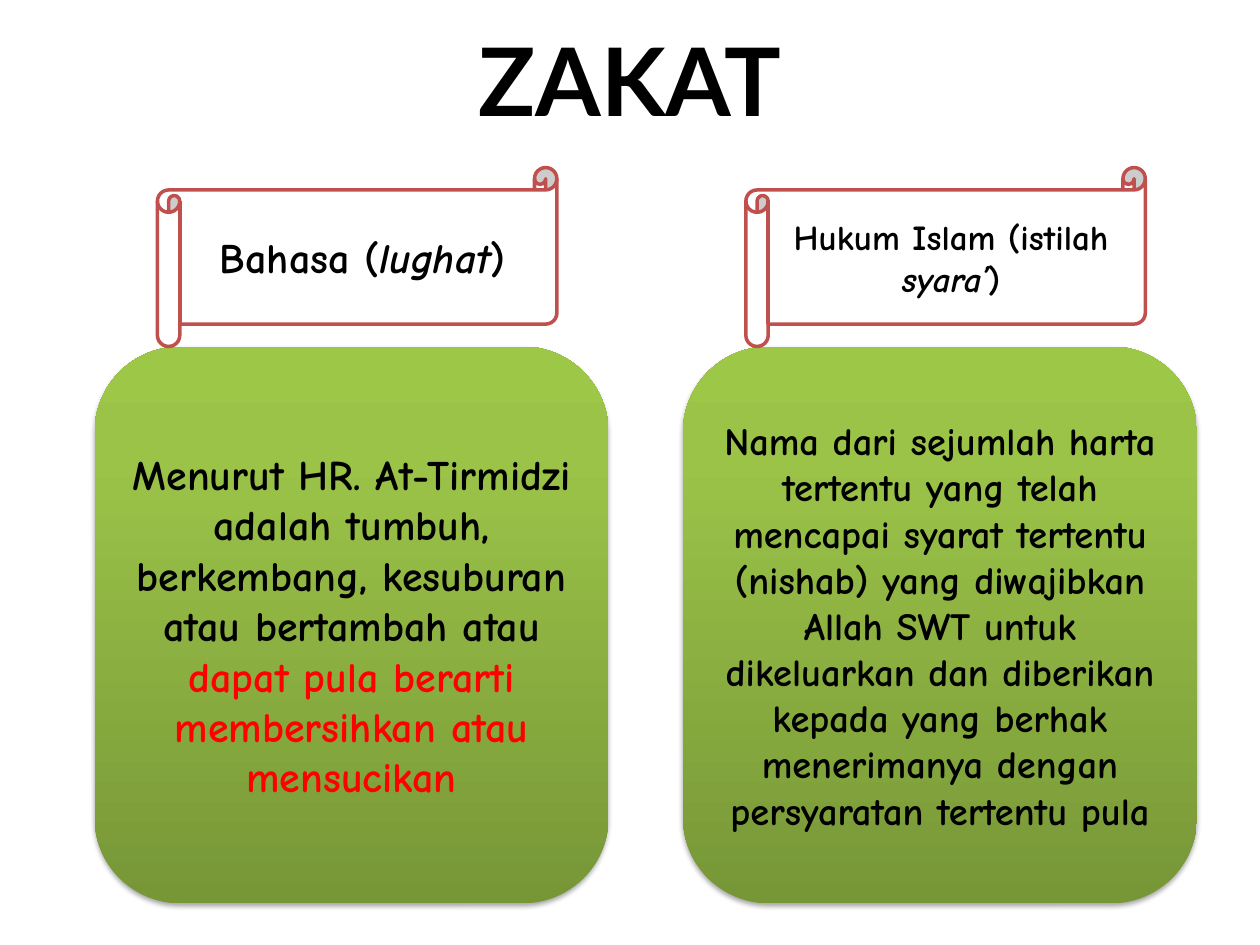
from pptx import Presentation
from pptx.dml.color import RGBColor
from pptx.enum.shapes import MSO_SHAPE
from pptx.enum.text import MSO_ANCHOR, PP_ALIGN
from pptx.oxml import parse_xml
from pptx.oxml.ns import nsdecls
from pptx.util import Inches, Pt

BLACK = RGBColor(0x00, 0x00, 0x00)
RED = RGBColor(0xFF, 0x00, 0x00)
WHITE = RGBColor(0xFF, 0xFF, 0xFF)
BRICK = RGBColor(0xC0, 0x50, 0x4D)
GREENS = [
    (0, RGBColor(0x77, 0x97, 0x37)),
    (80, RGBColor(0x9B, 0xC3, 0x48)),
    (100, RGBColor(0x9D, 0xC7, 0x46)),
]

TITLE = "ZAKAT"
MEANINGS = [
    {
        "heading": [("Bahasa (", {}), ("lughat", {"italic": True}), (")", {})],
        "heading_size": 24,
        "body": [
            ("Menurut HR. At-Tirmidzi adalah tumbuh, berkembang, kesuburan "
             "atau bertambah atau ", {}),
            ("dapat pula berarti membersihkan atau mensucikan", {"color": RED}),
        ],
        "body_size": 24,
    },
    {
        "heading": [("Hukum Islam (istilah ", {}), ("syara’", {"italic": True}), (")", {})],
        "heading_size": 20,
        "body": [
            ("Nama dari sejumlah harta tertentu yang telah mencapai syarat "
             "tertentu (nishab) yang diwajibkan Allah SWT untuk dikeluarkan "
             "dan diberikan kepada yang berhak menerimanya dengan "
             "persyaratan tertentu pula", {}),
        ],
        "body_size": 22,
    },
]

LEFT, COLUMN_STEP = 0.75, 4.67
CARD_TOP, CARD_WIDTH, CARD_HEIGHT = 2.75, 4.08, 4.42
SCROLL_INDENT, SCROLL_WIDTH, SCROLL_HEIGHT = 0.5, 3.17, 1.42


def write_text(shape, spans, size, font="Comic Neue"):
    """Fill a shape with one centred bold paragraph of formatted spans."""
    frame = shape.text_frame
    frame.word_wrap = True
    frame.vertical_anchor = MSO_ANCHOR.MIDDLE
    para = frame.paragraphs[0]
    para.alignment = PP_ALIGN.CENTER
    for text, style in spans:
        span = para.add_run()
        span.text = text
        span.font.name = font
        span.font.size = Pt(size)
        span.font.bold = True
        span.font.italic = style.get("italic", False)
        span.font.color.rgb = style.get("color", BLACK)


def add_box(page, kind, left, top, width, height):
    """Add a preset shape, measured in inches, without a shadow."""
    box = page.shapes.add_shape(
        kind, Inches(left), Inches(top), Inches(width), Inches(height))
    box.shadow.inherit = False
    return box


def style_card(card):
    """Give a card its green gradient and soft shadow below."""
    card.line.fill.background()
    stops = "".join(
        f'<a:gs pos="{share * 1000}"><a:srgbClr val="{color}"/></a:gs>'
        for share, color in GREENS)
    properties = card.element.spPr
    properties.insert(2, parse_xml(
        f'<a:gradFill {nsdecls("a")} rotWithShape="1"><a:gsLst>{stops}</a:gsLst>'
        '<a:lin ang="16200000" scaled="0"/></a:gradFill>'))
    properties.find("{*}effectLst").append(parse_xml(
        f'<a:outerShdw {nsdecls("a")} blurRad="{Pt(3.1)}" dist="{Pt(1.8)}" '
        'dir="5400000" rotWithShape="0"><a:srgbClr val="000000">'
        '<a:alpha val="35000"/></a:srgbClr></a:outerShdw>'))


def main():
    """Build the slide and save it."""
    deck = Presentation()
    deck.slide_width, deck.slide_height = Inches(10), Inches(7.5)
    page = deck.slides.add_slide(deck.slide_layouts[5])
    title = page.shapes.title
    title.left, title.top = Inches(0.5), Inches(0)
    title.width, title.height = Inches(9), Inches(1.25)
    write_text(title, [(TITLE, {})], 54, font="Lato")

    for column, meaning in enumerate(MEANINGS):
        left = LEFT + column * COLUMN_STEP
        card = add_box(page, MSO_SHAPE.ROUNDED_RECTANGLE,
                       left, CARD_TOP, CARD_WIDTH, CARD_HEIGHT)
        style_card(card)
        write_text(card, meaning["body"], meaning["body_size"])

        scroll = add_box(page, MSO_SHAPE.HORIZONTAL_SCROLL, left + SCROLL_INDENT,
                         CARD_TOP - SCROLL_HEIGHT, SCROLL_WIDTH, SCROLL_HEIGHT)
        scroll.fill.solid()
        scroll.fill.fore_color.rgb = WHITE
        scroll.line.color.rgb = BRICK
        scroll.line.width = Pt(2)
        write_text(scroll, meaning["heading"], meaning["heading_size"])

    deck.save("out.pptx")


if __name__ == "__main__":
    main()
